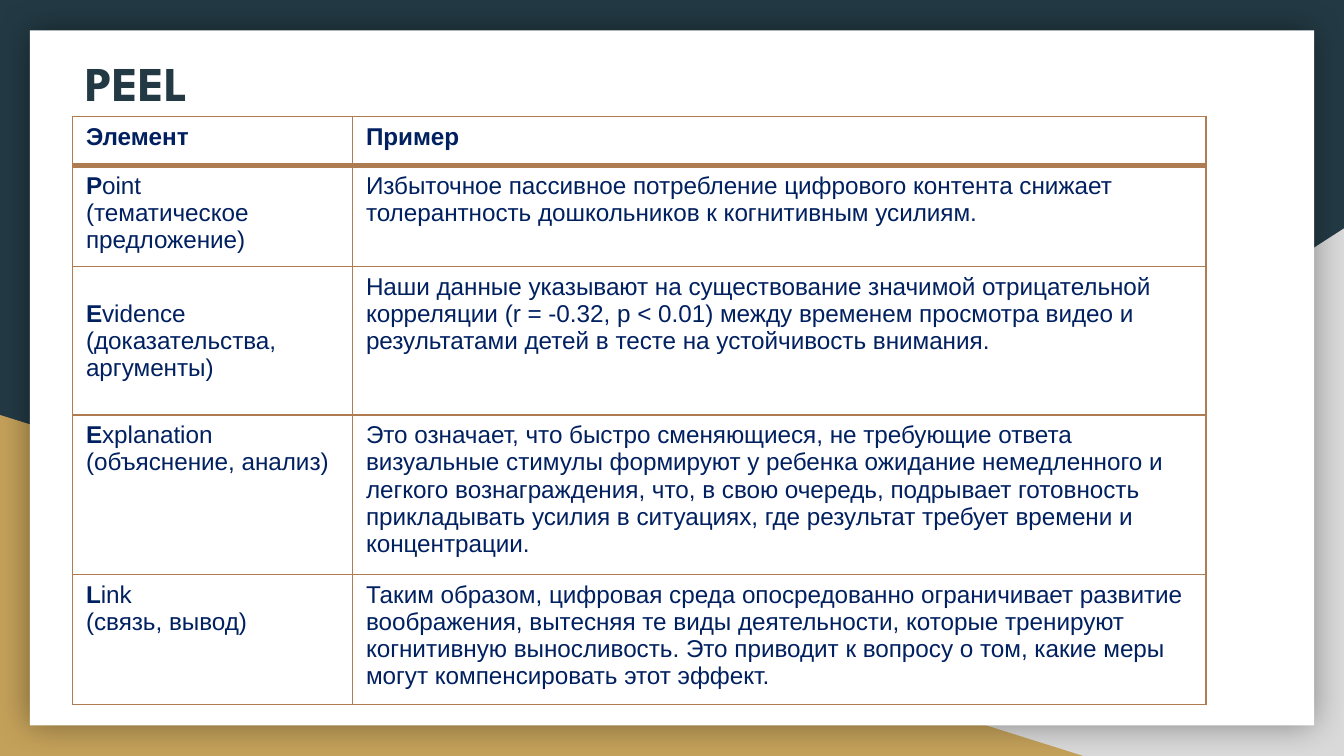
from lxml import etree
from pptx import Presentation
from pptx.dml.color import RGBColor
from pptx.enum.shapes import MSO_SHAPE
from pptx.enum.text import MSO_ANCHOR
from pptx.oxml.ns import qn
from pptx.util import Pt

RECTANGLE = MSO_SHAPE.RECTANGLE
TRIANGLE = MSO_SHAPE.RIGHT_TRIANGLE
TOP = MSO_ANCHOR.TOP
MIDDLE = MSO_ANCHOR.MIDDLE

WIDTH, HEIGHT = 720, 405
COLORS = {
    "slate": "233A44",
    "gray": "D9D9D9",
    "gold": "C4A15A",
    "white": "FFFFFF",
    "navy": "002060",
    "border": "AF7B51",
    "shadow": "000000",
}
HEADERS = ["Элемент", "Пример"]
PEEL_ROWS = [
    ("Point", "(тематическое предложение)",
     "Избыточное пассивное потребление цифрового контента снижает "
     "толерантность дошкольников к когнитивным усилиям."),
    ("Evidence", "(доказательства, аргументы)",
     "Наши данные указывают на существование значимой отрицательной "
     "корреляции (r = -0.32, p < 0.01) между временем просмотра видео и "
     "результатами детей в тесте на устойчивость внимания."),
    ("Explanation", "(объяснение, анализ)",
     "Это означает, что быстро сменяющиеся, не требующие ответа визуальные "
     "стимулы формируют у ребенка ожидание немедленного и легкого "
     "вознаграждения, что, в свою очередь, подрывает готовность прикладывать "
     "усилия в ситуациях, где результат требует времени и концентрации."),
    ("Link", "(связь, вывод)",
     "Таким образом, цифровая среда опосредованно ограничивает развитие "
     "воображения, вытесняя те виды деятельности, которые тренируют "
     "когнитивную выносливость. Это приводит к вопросу о том, какие меры "
     "могут компенсировать этот эффект."),
]
COLUMN_WIDTHS = [150, 457.3]
ROW_HEIGHTS = [26.3, 52.5, 79.7, 79.5, 65.7]


def rgb(name):
    return RGBColor.from_string(COLORS[name])


def add_text(paragraph, text, size=13, font="Arial", color="navy", bold=False):
    run = paragraph.add_run()
    run.text = text
    run.font.size = Pt(size)
    run.font.name = font
    run.font.bold = bold
    run.font.color.rgb = rgb(color)


def add_panel(slide, kind, left, top, width, height, color):
    shape = slide.shapes.add_shape(kind, Pt(left), Pt(top), Pt(width), Pt(height))
    shape.shadow.inherit = False
    shape.fill.solid()
    shape.fill.fore_color.rgb = rgb(color)
    shape.line.fill.background()
    return shape


def add_glow_shadow(shape, blur, opacity):
    effects = shape.element.spPr.find(qn("a:effectLst"))
    shadow = etree.SubElement(effects, qn("a:outerShdw"), blurRad=str(Pt(blur)),
                              dist="0", algn="ctr", rotWithShape="0")
    color = etree.SubElement(shadow, qn("a:srgbClr"), val=COLORS["shadow"])
    etree.SubElement(color, qn("a:alpha"), val=str(opacity * 1000))


def add_background(slide):
    slide.background.fill.solid()
    slide.background.fill.fore_color.rgb = rgb("slate")
    gray = add_panel(slide, TRIANGLE, 282.2, 122.4, 437.8, 282.6, "gray")
    gray.element.spPr.xfrm.set("flipH", "1")
    add_panel(slide, TRIANGLE, 0, 222.3, 580.3, 182.7, "gold")
    card = add_panel(slide, RECTANGLE, 16, 16.3, 688, 372.4, "white")
    add_glow_shadow(card, blur=18, opacity=40)


def add_title(slide, text):
    box = slide.shapes.add_textbox(Pt(38.9), Pt(21), Pt(506.9), Pt(53.3))
    frame = box.text_frame
    frame.word_wrap = True
    frame.vertical_anchor = TOP
    frame.margin_left = frame.margin_right = Pt(7.2)
    frame.margin_top = frame.margin_bottom = Pt(7.2)
    add_text(frame.paragraphs[0], text, size=26, font="League Spartan",
             color="slate", bold=True)


def format_cell(cell, top_width, bottom_width):
    properties = cell._tc.get_or_add_tcPr()
    edges = {"a:lnL": 1, "a:lnR": 1, "a:lnT": top_width, "a:lnB": bottom_width}
    for tag, width in edges.items():
        line = etree.SubElement(properties, qn(tag), w=str(Pt(width)))
        fill = etree.SubElement(line, qn("a:solidFill"))
        etree.SubElement(fill, qn("a:srgbClr"), val=COLORS["border"])
    cell.fill.solid()
    cell.fill.fore_color.rgb = rgb("white")


def add_peel_table(slide):
    frame = slide.shapes.add_table(
        len(ROW_HEIGHTS), len(COLUMN_WIDTHS), Pt(38.9), Pt(62.4),
        Pt(sum(COLUMN_WIDTHS)), Pt(sum(ROW_HEIGHTS)))
    table = frame.table
    for column, width in zip(table.columns, COLUMN_WIDTHS):
        column.width = Pt(width)
    for index, height in enumerate(ROW_HEIGHTS):
        table.rows[index].height = Pt(height)
        for cell in table.rows[index].cells:
            format_cell(cell, 3 if index == 1 else 1, 3 if index == 0 else 1)
    for column, header in enumerate(HEADERS):
        add_text(table.cell(0, column).text_frame.paragraphs[0], header, bold=True)
    for index, (term, meaning, example) in enumerate(PEEL_ROWS, start=1):
        cell = table.cell(index, 0)
        cell.vertical_anchor = MIDDLE if term == "Evidence" else TOP
        paragraph = cell.text_frame.paragraphs[0]
        add_text(paragraph, term[0], bold=True)
        add_text(paragraph, term[1:])
        add_text(cell.text_frame.add_paragraph(), meaning)
        add_text(table.cell(index, 1).text_frame.paragraphs[0], example)


def main():
    presentation = Presentation()
    presentation.slide_width = Pt(WIDTH)
    presentation.slide_height = Pt(HEIGHT)
    slide = presentation.slides.add_slide(presentation.slide_layouts[6])
    add_background(slide)
    add_title(slide, "PEEL")
    add_peel_table(slide)
    presentation.save("out.pptx")


if __name__ == "__main__":
    main()
